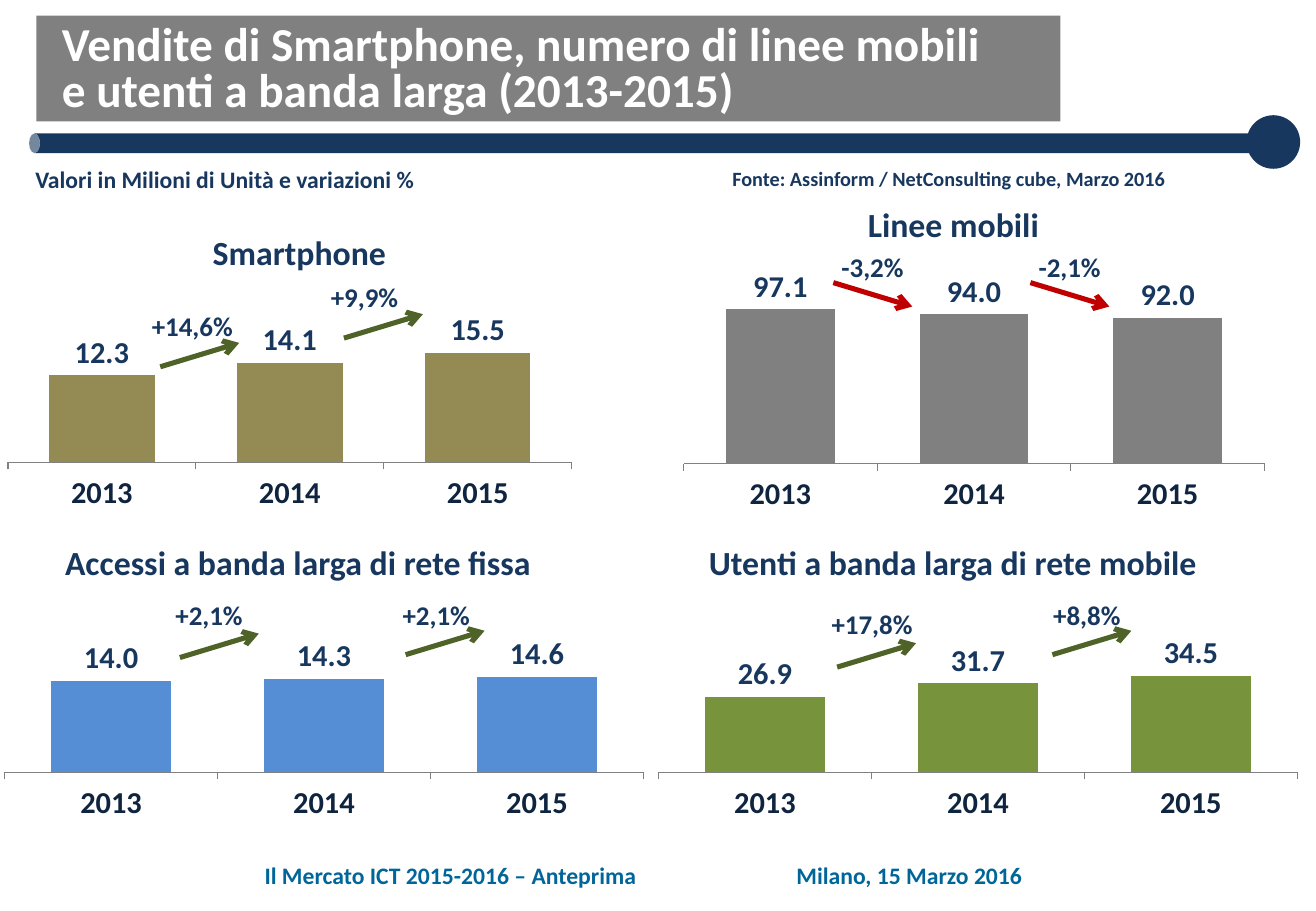
import lxml.etree
import pptx
import pptx.chart.data
import pptx.dml.color
import pptx.enum.chart
import pptx.enum.shapes
import pptx.enum.text
import pptx.oxml
import pptx.oxml.ns
import pptx.util
from pptx.util import Cm

COLORS = {
    "navy": "17375E",
    "dark": "0F243E",
    "gray": "808080",
    "white": "FFFFFF",
    "teal": "006699",
    "khaki": "948A54",
    "blue": "558ED5",
    "green": "77933C",
    "rise": "4F6228",
    "fall": "C00000",
}
FONT = "Calibri"
YEARS = ["2013", "2014", "2015"]
ARROW_RUN, ARROW_DROP = 1.65, 0.5

# Lengths in cm. heading: centre, top. chart: left, top, width, height.
# plot: fractions of the chart. changes: text, label centre, label top, arrow start.
PANELS = [
    {
        "heading": ("Smartphone", 6.26, 4.72),
        "chart": (0.08, 5.59, 12.47, 5.31),
        "plot": (0.007, 0.323, 0.945, 0.445),
        "values": (12.3, 14.1, 15.5), "maximum": 16, "color": "khaki",
        "changes": [("+14,6%", 4.02, 6.35, (3.35, 7.67)),
                    ("+9,9%", 7.62, 5.74, (7.19, 7.07))],
    },
    {
        "heading": ("Linee mobili", 19.93, 4.14),
        "chart": (14.2, 5.61, 12.88, 5.31),
        "plot": (0.007, 0.137, 0.943, 0.631),
        "values": (97.1, 94.0, 92.0), "maximum": 100, "color": "gray",
        "changes": [("-3,2%", 18.24, 5.11, (17.42, 5.91)),
                    ("-2,1%", 22.36, 5.11, (21.54, 5.91))],
    },
    {
        "heading": ("Accessi a banda larga di rete fissa", 6.23, 11.2),
        "chart": (0, 12.52, 13.77, 4.8),
        "plot": (0.007, 0.329, 0.97, 0.427),
        "values": (14.0, 14.3, 14.6), "maximum": 15, "color": "blue",
        "changes": [("+2,1%", 4.37, 12.4, (3.76, 13.75)),
                    ("+2,1%", 9.12, 12.4, (8.48, 13.69))],
    },
    {
        "heading": ("Utenti a banda larga di rete mobile", 19.92, 11.2),
        "chart": (13.67, 12.52, 13.77, 4.8),
        "plot": (0.007, 0.329, 0.97, 0.427),
        "values": (26.9, 31.7, 34.5), "maximum": 35, "color": "green",
        "changes": [("+17,8%", 18.23, 12.57, (17.5, 13.95)),
                    ("+8,8%", 22.72, 12.4, (22, 13.69))],
    },
]


def rgb(name):
    return pptx.dml.color.RGBColor.from_string(COLORS[name])


def set_font(font, size, color):
    font.name = FONT
    font.size = pptx.util.Pt(size)
    font.bold = True
    font.color.rgb = rgb(color)


def add_block(page, kind, left, top, width, height, color):
    block = page.shapes.add_shape(kind, Cm(left), Cm(top), Cm(width), Cm(height))
    block.shadow.inherit = False
    block.fill.solid()
    block.fill.fore_color.rgb = rgb(color)
    block.line.fill.background()
    return block


def add_header(page):
    kinds = pptx.enum.shapes.MSO_SHAPE
    rod = add_block(page, kinds.CAN, 13.23, -9.83, 0.41, 25.65, "navy")
    rod.rotation = 270
    rod.adjustments[0] = 0.55
    add_block(page, kinds.RECTANGLE, 0.76, 0.33, 21.41, 2.21, "gray")
    add_block(page, kinds.OVAL, 26.06, 2.41, 1.12, 1.12, "navy")


def fill_title(page, text):
    title = page.shapes.title
    title.left, title.top = Cm(1.04), Cm(0.41)
    title.width, title.height = Cm(26.4), Cm(2.54)
    frame = title.text_frame
    frame.text = text
    frame.auto_size = pptx.enum.text.MSO_AUTO_SIZE.NONE
    frame.vertical_anchor = pptx.enum.text.MSO_ANCHOR.TOP
    para = frame.paragraphs[0]
    para.alignment = pptx.enum.text.PP_ALIGN.LEFT
    para.line_spacing = 0.8
    set_font(para.font, 28, "white")


def add_label(page, text, center, top, width, size, color="navy"):
    """Add one centred line of bold text around a horizontal centre."""
    box = page.shapes.add_textbox(
        Cm(center - width / 2), Cm(top), Cm(width), Cm(0.9))
    box.text_frame.word_wrap = True
    para = box.text_frame.paragraphs[0]
    para.text = text
    para.alignment = pptx.enum.text.PP_ALIGN.CENTER
    set_font(para.font, size, color)


def add_arrow(page, start, drop, color):
    left, top = start
    arrow = page.shapes.add_connector(
        pptx.enum.shapes.MSO_CONNECTOR.STRAIGHT,
        Cm(left), Cm(top), Cm(left + ARROW_RUN), Cm(top + drop))
    arrow.line.color.rgb = rgb(color)
    arrow.line.width = pptx.util.Pt(3)
    line = arrow.line._get_or_add_ln()
    lxml.etree.SubElement(line, pptx.oxml.ns.qn("a:tailEnd"), type="arrow")
    lxml.etree.SubElement(
        arrow._element.spPr, pptx.oxml.ns.qn("a:effectLst"))


def place_plot(chart, plot):
    """Fix the inner plot area at fractions of the chart."""
    area = chart._chartSpace.chart.plotArea
    for old in area.findall(pptx.oxml.ns.qn("c:layout")):
        area.remove(old)
    fields = [("layoutTarget", "inner"), ("xMode", "edge"), ("yMode", "edge")]
    fields += zip("xywh", plot)
    layout = "".join(f'<c:{tag} val="{value}"/>' for tag, value in fields)
    area.insert(0, pptx.oxml.parse_xml(
        f'<c:layout {pptx.oxml.ns.nsdecls("c")}>'
        f"<c:manualLayout>{layout}</c:manualLayout></c:layout>"))


def add_columns(page, panel):
    data = pptx.chart.data.CategoryChartData()
    data.categories = YEARS
    data.add_series(panel["heading"][0], panel["values"])
    chart = page.shapes.add_chart(
        pptx.enum.chart.XL_CHART_TYPE.COLUMN_CLUSTERED,
        *map(Cm, panel["chart"]), data).chart
    chart.has_legend = False
    chart.has_title = False
    set_font(chart.font, 18, "dark")
    place_plot(chart, panel["plot"])

    scale = chart.value_axis
    scale.minimum_scale, scale.maximum_scale = 0, panel["maximum"]
    scale.has_major_gridlines = False
    scale.visible = False
    years = chart.category_axis
    years.format.line.color.rgb = rgb("gray")
    set_font(years.tick_labels.font, 18, "dark")

    plot = chart.plots[0]
    plot.gap_width = 78
    plot.vary_by_categories = False
    fill = plot.series[0].format.fill
    fill.solid()
    fill.fore_color.rgb = rgb(panel["color"])
    plot.has_data_labels = True
    labels = plot.data_labels
    labels.show_value = True
    labels.number_format = "#,##0.0"
    labels.number_format_is_linked = False
    labels.position = pptx.enum.chart.XL_LABEL_POSITION.OUTSIDE_END
    set_font(labels.font, 18, "navy")


def add_panel(page, panel):
    add_columns(page, panel)
    add_label(page, *panel["heading"], 13.2, 20)
    for text, center, top, start in panel["changes"]:
        falling = text.startswith("-")
        add_label(page, text, center, top, 2.72, 16)
        add_arrow(page, start, ARROW_DROP if falling else -ARROW_DROP,
                  "fall" if falling else "rise")


def main():
    deck = pptx.Presentation()
    deck.slide_width, deck.slide_height = Cm(27.51), Cm(19.05)
    page = deck.slides.add_slide(deck.slide_layouts.get_by_name("Title Only"))
    add_header(page)
    title = page.shapes.title
    page.shapes._spTree.append(title._element)
    fill_title(page, "Vendite di Smartphone, numero di linee mobili\v"
                     "e utenti a banda larga (2013-2015)")
    add_label(page, "Valori in Milioni di Unità e variazioni %", 4.7, 3.33, 9.2, 14)
    add_label(page, "Fonte: Assinform / NetConsulting cube, Marzo 2016",
              19.84, 3.35, 10.5, 12)
    for panel in PANELS:
        add_panel(page, panel)
    add_label(page, "Il Mercato ICT 2015-2016 – Anteprima", 9.42, 17.88, 9, 14, "teal")
    add_label(page, "Milano, 15 Marzo 2016", 19.01, 17.88, 9, 14, "teal")
    deck.save("out.pptx")


if __name__ == "__main__":
    main()
